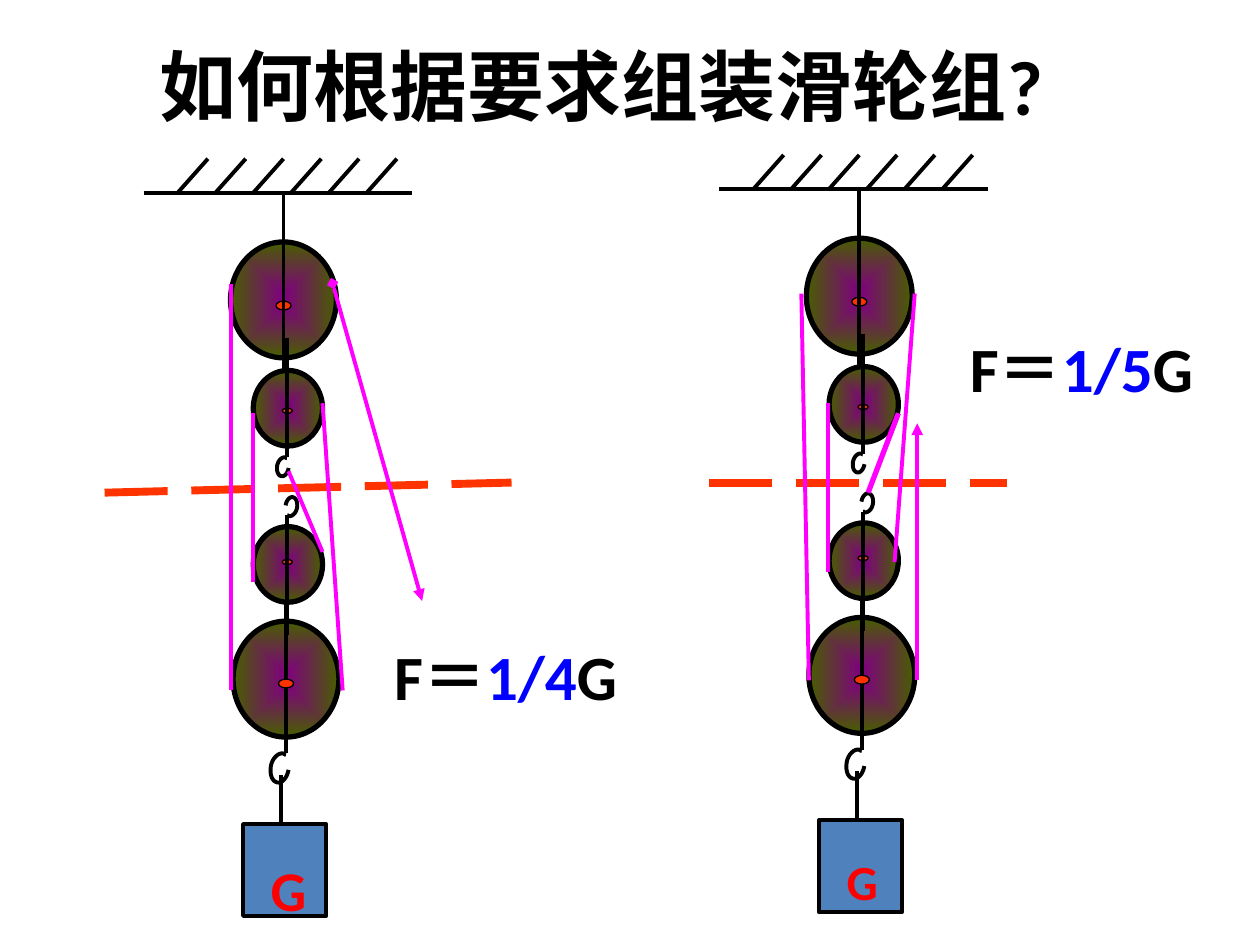
from lxml.etree import SubElement
from pptx import Presentation
from pptx.dml.color import RGBColor
from pptx.enum.dml import MSO_LINE
from pptx.enum.shapes import MSO_CONNECTOR, MSO_SHAPE
from pptx.enum.text import MSO_ANCHOR, MSO_AUTO_SIZE, PP_ALIGN
from pptx.oxml.ns import qn
from pptx.util import Cm, Pt

TITLE = "如何根据要求组装滑轮组?"
FONT = "Calibri"
COLOURS = {
    "black": "000000", "blue": "0000FF", "red": "FF0000", "rope": "FF00FF",
    "orange": "FF3300", "weight": "4F81BD", "core": "800080", "rim": "475E00",
}
SYSTEMS = [
    {
        "offset": (0, 0), "weight_size": 32,
        "divider": (0.83, 3.91, 4.06, 3.83),
        "formula": (3.03, 5.01, "1/4"),
        "ropes": [
            (2.29, 3.74, 2.56, 4.38, 2.25, None, None),
            (2.01, 4.62, 2.01, 3.28, 2.25, None, None),
            (2.56, 3.2, 2.72, 5.48, 2.25, None, None),
            (1.83, 5.48, 1.83, 2.25, 2.25, None, None),
            (2.64, 2.25, 3.35, 4.77, 2.25, "diamond", "triangle"),
        ],
    },
    {
        "offset": (4.57, -0.03), "weight_size": 28,
        "divider": (5.63, 3.83, 7.99, 3.83),
        "formula": (7.6, 2.57, "1/5"),
        "ropes": [
            (6.89, 3.91, 7.13, 3.28, 3, None, None),
            (6.57, 3.2, 6.57, 4.54, 2.25, None, None),
            (7.1, 4.46, 7.26, 2.33, 2.25, None, None),
            (6.36, 2.33, 6.42, 5.4, 2.25, None, None),
            (7.28, 5.4, 7.28, 3.36, 2.25, None, "triangle"),
        ],
    },
]
HOOK_WIDTH, HOOK_HEIGHT = 0.15, 0.24
HOOK_CURVES = [
    ((0.14, 0.13), (0.13, 0.19), (0.09, 0.24), (0.05, 0.23)),
    ((0.05, 0.23), (0.01, 0.22), (-0.01, 0.17), (0, 0.1)),
    ((0, 0.1), (0.01, 0.04), (0.06, -0.01), (0.1, 0)),
    ((0.1, 0), (0.1, 0), (0.11, 0.01), (0.12, 0.01)),
]
CURVE_STEPS = 8


def inches(value):
    return Cm(value * 2.54)


def colour(name):
    return RGBColor.from_string(COLOURS[name])


def add_line(shapes, start, end, name="black", width=2.25, dash=None, head=None, tail=None):
    line = shapes.add_connector(MSO_CONNECTOR.STRAIGHT, *map(inches, (*start, *end)))
    line.line.color.rgb = colour(name)
    line.line.width = Pt(width)
    if dash:
        line.line.dash_style = dash
    outline = line._element.spPr.find(qn("a:ln"))
    for tag, kind in (("a:headEnd", head), ("a:tailEnd", tail)):
        if kind:
            SubElement(outline, qn(tag), type=kind)
    SubElement(line._element.spPr, qn("a:effectLst"))


def add_solid(shapes, preset, area, fill, width):
    shape = shapes.add_shape(preset, *map(inches, area))
    shape.shadow.inherit = False
    shape.fill.solid()
    shape.fill.fore_color.rgb = colour(fill)
    shape.line.color.rgb = colour("black")
    shape.line.width = Pt(width)
    return shape


def add_wheel(shapes, area):
    wheel = add_solid(shapes, MSO_SHAPE.OVAL, area, "core", 3)
    wheel.fill.gradient()
    for stop, name in zip(wheel.fill.gradient_stops, ("core", "rim")):
        stop.color.rgb = colour(name)
    gradient = wheel._element.spPr.find(qn("a:gradFill"))
    gradient.remove(gradient.find(qn("a:lin")))
    shade = SubElement(gradient, qn("a:path"), path="shape")
    SubElement(shade, qn("a:fillToRect"), l="50000", t="50000", r="50000", b="50000")


def add_hook(shapes, left, top, scale=1, turned=False):
    points = []
    for curve in HOOK_CURVES:
        for step in range(CURVE_STEPS + 1):
            t = step / CURVE_STEPS
            weights = ((1 - t) ** 3, 3 * t * (1 - t) ** 2, 3 * t * t * (1 - t), t ** 3)
            x, y = (sum(w * p[axis] for w, p in zip(weights, curve)) for axis in (0, 1))
            if turned:
                x, y = HOOK_WIDTH - x, HOOK_HEIGHT - y
            points.append((inches(left + x * scale), inches(top + y * scale)))
    builder = shapes.build_freeform(*points[0])
    builder.add_line_segments(points[1:], close=False)
    hook = builder.convert_to_shape()
    hook.shadow.inherit = False
    hook.fill.background()
    hook.line.color.rgb = colour("black")
    hook.line.width = Pt(2.25)


def add_text(shapes, area, size, spans):
    box = shapes.add_textbox(*map(inches, area))
    box.text_frame.word_wrap = True
    box.text_frame.auto_size = MSO_AUTO_SIZE.SHAPE_TO_FIT_TEXT
    for text, name in spans:
        span = box.text_frame.paragraphs[0].add_run()
        span.text = text
        span.font.name = FONT
        span.font.size = Pt(size)
        span.font.bold = True
        span.font.color.rgb = colour(name)


def add_pulleys(slide, offset, weight_size):
    shapes = slide.shapes.add_group_shape().shapes
    dx, dy = offset

    def line(x1, y1, x2, y2):
        add_line(shapes, (x1 + dx, y1 + dy), (x2 + dx, y2 + dy))

    def area(left, top, width, height):
        return left + dx, top + dy, width, height

    def axle(*place):
        add_solid(shapes, MSO_SHAPE.OVAL, area(*place), "orange", 0.75)

    def hook(left, top, **options):
        add_hook(shapes, left + dx, top + dy, **options)

    line(1.14, 1.53, 3.27, 1.53)
    for index in range(6):
        x = 1.41 + 0.3 * index
        line(x, 1.53, x + 0.24, 1.26)
    line(2.23, 6.15, 2.23, 6.54)
    add_solid(shapes, MSO_SHAPE.RECTANGLE, area(1.93, 6.54, 0.66, 0.73), "weight", 2.25)
    add_text(shapes, area(2.05, 6.74, 0.48, 0.6), weight_size, [("G", "red")])

    add_wheel(shapes, area(1.83, 1.92, 0.84, 0.92))
    axle(2.19, 2.39, 0.12, 0.07)
    hook(2.13, 2.98)
    line(2.25, 1.53, 2.25, 2.98)
    add_wheel(shapes, area(2.01, 2.94, 0.55, 0.6))
    axle(2.24, 3.24, 0.08, 0.04)
    hook(2.2, 3.63, scale=0.65)
    line(2.28, 2.68, 2.28, 3.63)

    add_wheel(shapes, area(1.85, 4.93, 0.84, 0.92))
    line(2.27, 4.53, 2.27, 5.98)
    axle(2.21, 5.39, 0.12, 0.07)
    hook(2.21, 4.34, turned=True)
    hook(2.15, 5.98)
    add_wheel(shapes, area(2.01, 4.18, 0.55, 0.6))
    axle(2.24, 4.44, 0.08, 0.04)
    hook(2.26, 3.94, scale=0.65, turned=True)
    line(2.28, 5.04, 2.28, 4.09)


def add_system(slide, system):
    x1, y1, x2, y2 = system["divider"]
    add_line(slide.shapes, (x1, y1), (x2, y2), "orange", 4.5, MSO_LINE.LONG_DASH)
    add_pulleys(slide, system["offset"], system["weight_size"])
    for x1, y1, x2, y2, width, head, tail in system["ropes"]:
        add_line(slide.shapes, (x1, y1), (x2, y2), "rope", width, head=head, tail=tail)
    left, top, share = system["formula"]
    spans = [("F＝", "black"), (share, "blue"), ("G", "black")]
    add_text(slide.shapes, (left, top, 2.13, 0.7), 36, spans)


def add_title(slide):
    title = slide.shapes.title
    title.left, title.top, title.width, title.height = map(inches, (0.27, 0.05, 9, 1.25))
    title.text_frame.text = TITLE
    title.text_frame.vertical_anchor = MSO_ANCHOR.MIDDLE
    para = title.text_frame.paragraphs[0]
    para.alignment = PP_ALIGN.CENTER
    font = para.runs[0].font
    font.name, font.size, font.bold = FONT, Pt(44), True
    font.color.rgb = colour("black")


def main():
    deck = Presentation()
    deck.slide_width, deck.slide_height = Cm(25.4), Cm(19.05)
    slide = deck.slides.add_slide(deck.slide_layouts[5])
    add_title(slide)
    for system in SYSTEMS:
        add_system(slide, system)
    deck.save("out.pptx")


if __name__ == "__main__":
    main()
